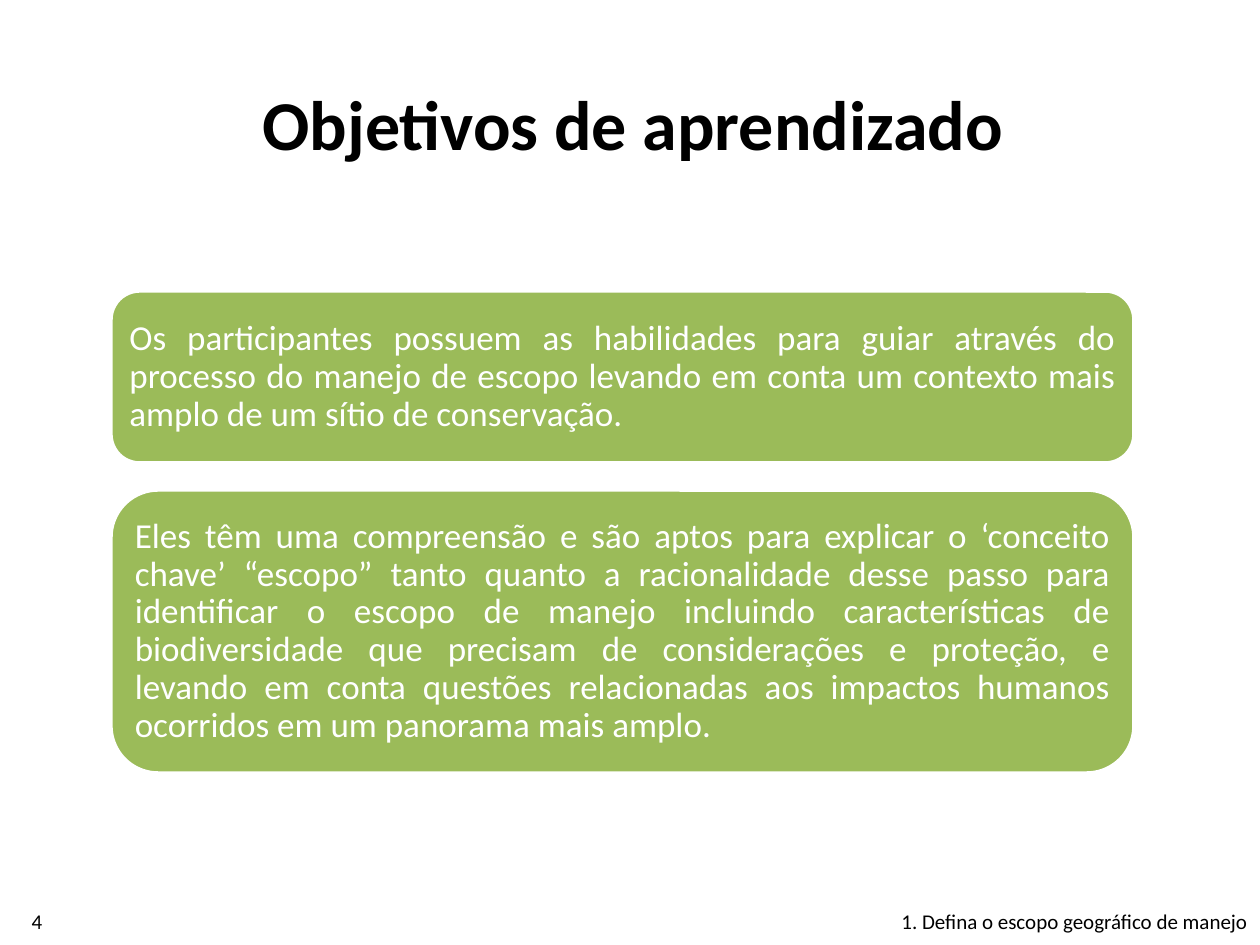
import pptx
import pptx.util
import pptx.dml.color
import pptx.enum.shapes
import pptx.enum.text

EMU_PER_PX = 914400 // 126
ALIGN = pptx.enum.text.PP_ALIGN

# Content: text, box (left, top, width, height), size, bold, alignment
LABELS = [
    ("Objetivos de aprendizado", (179, 48, 908, 149), 40, True, ALIGN.CENTER),
    ("4", (-1, 897, 76, 48), 12, False, ALIGN.CENTER),
    ("1. Defina o escopo geográfico de manejo", (520, 897, 740, 48), 12, False, ALIGN.RIGHT),
]
OBJECTIVES = [
    ("Os participantes possuem as habilidades para guiar através do processo do "
     "manejo de escopo levando em conta um contexto mais amplo de um sítio de "
     "conservação.", 172),
    ("Eles têm uma compreensão e são aptos para explicar o ‘conceito chave’ “escopo” "
     "tanto quanto a racionalidade desse passo para identificar o escopo de manejo "
     "incluindo características de biodiversidade que precisam de considerações e "
     "proteção, e levando em conta questões relacionadas aos impactos humanos "
     "ocorridos em um panorama mais amplo.", 283),
]
CARD_LEFT, CARD_TOP, CARD_WIDTH, CARD_GAP, CARD_INSET = 111, 291, 1023, 27, 10


def px(value):
    return pptx.util.Emu(value * EMU_PER_PX)


def color(value):
    return pptx.dml.color.RGBColor.from_string(value)


def write(shape, text, size, text_color, alignment, bold=False):
    frame = shape.text_frame
    frame.word_wrap = True
    frame.vertical_anchor = pptx.enum.text.MSO_ANCHOR.MIDDLE
    paragraph = frame.paragraphs[0]
    paragraph.alignment = alignment
    run = paragraph.add_run()
    run.text = text
    run.font.name = "Calibri"
    run.font.size = pptx.util.Pt(size)
    run.font.bold = bold
    run.font.color.rgb = color(text_color)
    return paragraph


presentation = pptx.Presentation()
presentation.slide_width = pptx.util.Inches(10)
presentation.slide_height = pptx.util.Inches(7.5)
slide = presentation.slides.add_slide(presentation.slide_layouts[6])

# Title, page number and footer
for text, box, size, bold, alignment in LABELS:
    label = slide.shapes.add_textbox(*map(px, box))
    write(label, text, size, "000000", alignment, bold)

# Objective cards, stacked with an equal gap
top = CARD_TOP
for text, height in OBJECTIVES:
    card = slide.shapes.add_shape(
        pptx.enum.shapes.MSO_SHAPE.ROUNDED_RECTANGLE,
        px(CARD_LEFT), px(top), px(CARD_WIDTH), px(height))
    card.shadow.inherit = False
    card.fill.solid()
    card.fill.fore_color.rgb = color("9BBB59")
    card.line.color.rgb = color("FFFFFF")
    card.line.width = pptx.util.Pt(2)
    frame = card.text_frame
    frame.margin_left = frame.margin_right = px(CARD_INSET)
    frame.margin_top = frame.margin_bottom = px(CARD_INSET)
    write(card, text, 20, "FFFFFF", ALIGN.JUSTIFY).line_spacing = 0.9
    top += height + CARD_GAP

presentation.save("out.pptx")
